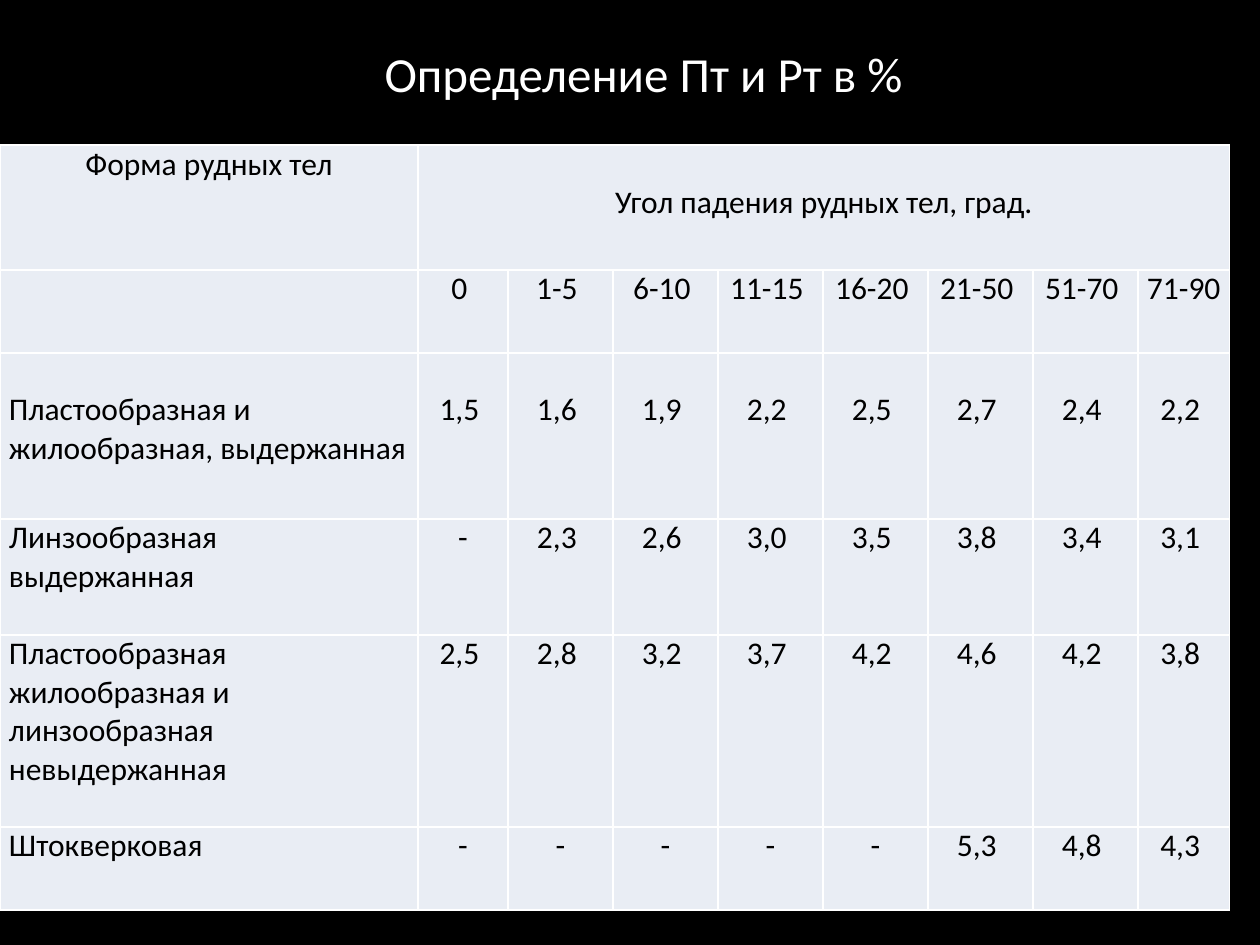
from lxml.etree import fromstring
from pptx import Presentation
from pptx.dml.color import RGBColor
from pptx.enum.text import MSO_ANCHOR, MSO_AUTO_SIZE, PP_ALIGN
from pptx.oxml.ns import nsdecls
from pptx.util import Emu, Pt

COLORS = {"back": "000000", "cell": "E9EDF4", "border": "FFFFFF",
          "text": "000000", "title": "FFFFFF"}
FONT = "Calibri"
LINE = 38  # height of one text line in the table, px

COL_WIDTHS = [418, 90] + [105] * 6 + [92]
ROW_HEIGHTS = [125, 83, 166, 116, 192, 83]
ROWS = [
    ["Форма рудных тел", "Угол падения рудных тел, град."] + [""] * 7,
    ["", "0 ", "1-5 ", "6-10 ", "11-15 ", "16-20 ", "21-50 ", "51-70 ", "71-90"],
    ["Пластообразная и жилообразная, выдержанная",
     "1,5 ", "1,6 ", "1,9 ", "2,2 ", "2,5 ", "2,7 ", "2,4 ", "2,2 "],
    ["Линзообразная выдержанная",
     "-", "2,3 ", "2,6 ", "3,0 ", "3,5 ", "3,8 ", "3,4 ", "3,1 "],
    ["Пластообразная жилообразная и линзообразная невыдержанная",
     "2,5 ", "2,8 ", "3,2 ", "3,7 ", "4,2 ", "4,6 ", "4,2 ", "3,8 "],
    ["Штокверковая", "-", "-", "-", "-", "-", "5,3 ", "4,8 ", "4,3 "],
]


def px(n):
    return Emu(round(n * 914400 / 126))


def rgb(name):
    return RGBColor.from_string(COLORS[name])


class SlideBuilder:
    def __init__(self, prs):
        self.s = prs.slides.add_slide(prs.slide_layouts[5])
        fill = self.s.background.fill
        fill.solid()
        fill.fore_color.rgb = rgb("back")

    def add_text(self, p, text, size, color, align):
        p.alignment = align
        r = p.add_run()
        r.text = text
        r.font.name = FONT
        r.font.size = Pt(size)
        r.font.bold = False
        r.font.color.rgb = rgb(color)

    def title(self, text, x, y, w, h):
        sp = self.s.shapes.title
        sp.left, sp.top, sp.width, sp.height = px(x), px(y), px(w), px(h)
        tf = sp.text_frame
        tf.word_wrap = False
        tf.auto_size = MSO_AUTO_SIZE.SHAPE_TO_FIT_TEXT
        tf.vertical_anchor = MSO_ANCHOR.TOP
        self.add_text(tf.paragraphs[0], text, 28, "title", PP_ALIGN.LEFT)

    def cell(self, cell, text, align, lines_above):
        cell.margin_left = cell.margin_right = px(9)
        cell.margin_top, cell.margin_bottom = px(lines_above * LINE), 0
        cell.vertical_anchor = MSO_ANCHOR.TOP
        cell.fill.solid()
        cell.fill.fore_color.rgb = rgb("cell")
        self.borders(cell)
        p = cell.text_frame.paragraphs[0]
        if text:
            self.add_text(p, text, 18, "text", align)
        else:
            p.font.size = Pt(18)

    def borders(self, cell):
        tc_pr = cell._tc.get_or_add_tcPr()
        for i, side in enumerate("LRTB"):
            tc_pr.insert(i, fromstring(
                f'<a:ln{side} {nsdecls("a")} w="{Pt(1)}"><a:solidFill>'
                f'<a:srgbClr val="{COLORS["border"]}"/></a:solidFill></a:ln{side}>'))

    def table(self, rows, x, y, widths, heights):
        table = self.s.shapes.add_table(
            len(rows), len(widths), px(x), px(y),
            px(sum(widths)), px(sum(heights))).table
        table.first_row = table.horz_banding = False
        for column, width in zip(table.columns, widths):
            column.width = px(width)
        for row, height in zip(table.rows, heights):
            row.height = px(height)
        for i, row in enumerate(rows):
            for j, text in enumerate(row):
                left = j == 0 and i > 0
                lowered = i == 2 or (i == 0 and j > 0)
                self.cell(table.cell(i, j), text,
                          PP_ALIGN.LEFT if left else PP_ALIGN.CENTER, int(lowered))
        table.cell(0, 1).merge(table.cell(0, len(widths) - 1))


def main():
    prs = Presentation()
    prs.slide_width, prs.slide_height = px(1260), px(945)
    slide = SlideBuilder(prs)
    slide.title("Определение Пт и Рт в %", 372, 37, 560, 72)
    slide.table(ROWS, 0, 145, COL_WIDTHS, ROW_HEIGHTS)
    prs.save("out.pptx")


if __name__ == "__main__":
    main()
